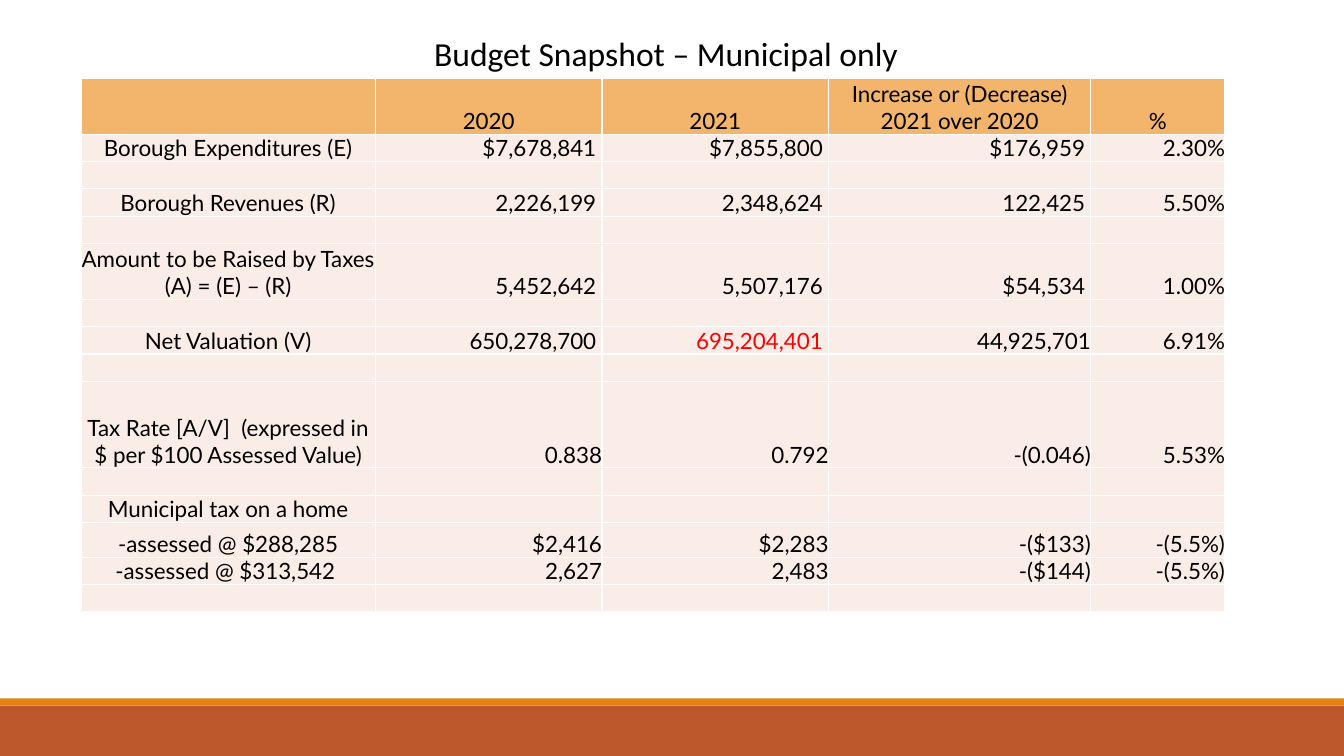
from lxml.etree import SubElement
from pptx import Presentation
from pptx.dml.color import RGBColor
from pptx.enum.shapes import MSO_SHAPE
from pptx.enum.text import MSO_ANCHOR, PP_ALIGN
from pptx.oxml.ns import qn
from pptx.util import Cm, Pt

# Content
TITLE = "Budget Snapshot – Municipal only"
BLANK = ("",) * 5
BUDGET = [
    ("", "2020", "2021", "Increase or (Decrease) 2021 over 2020", "%"),
    ("Borough Expenditures (E)", "$7,678,841 ", " $7,855,800 ", "$176,959 ", "2.30%"),
    BLANK,
    ("Borough Revenues (R)", "2,226,199 ", "2,348,624 ", "122,425 ", "5.50%"),
    BLANK,
    ("Amount to be Raised by Taxes (A) = (E) – (R)",
     "5,452,642 ", "5,507,176 ", "$54,534 ", "1.00%"),
    BLANK,
    ("Net Valuation (V)", "650,278,700 ", "695,204,401 ", "44,925,701", "6.91%"),
    BLANK,
    ("Tax Rate [A/V]  (expressed in $ per $100 Assessed Value)",
     "0.838", "0.792", "-(0.046)", "5.53%"),
    BLANK,
    ("Municipal tax on a home", "", "", "", ""),
    ("-assessed @ $288,285", "$2,416", "$2,283", "-($133)", "-(5.5%)"),
    ("-assessed @ $313,542 ", "2,627", "2,483", "-($144)", "-(5.5%)"),
    BLANK,
]
HIGHLIGHTED = "695,204,401 "

# Format
COLORS = {"header": "F3B56C", "body": "FAEDE7", "border": "FFFFFF", "text": "000000",
          "highlight": "FF0000", "band": "BD582C", "stripe": "E48312"}
COLUMN_WIDTHS = [7.42, 5.71, 5.71, 6.61, 3.38]
ROW_HEIGHT = 0.69
TALL_ROWS = {0: 1.4, 5: 1.4, 9: 2.18, 12: 0.87}
TEXT_SIZE = Pt(16)
CELL_FORMAT = {"margin_left": 0, "margin_right": 0, "margin_top": 0,
               "margin_bottom": 0, "vertical_anchor": MSO_ANCHOR.BOTTOM}
TITLE_PLACE = {"left": Cm(2.74), "top": Cm(0.69), "width": Cm(28.09), "height": Cm(1.27)}


def rgb(name):
    return RGBColor.from_string(COLORS[name])


def apply(target, values):
    for attribute, value in values.items():
        setattr(target, attribute, value)


def add_borders(cell):
    properties = cell._tc.get_or_add_tcPr()
    for side in ("lnL", "lnR", "lnT", "lnB"):
        line = SubElement(properties, qn(f"a:{side}"), w=str(Pt(1)))
        fill = SubElement(line, qn("a:solidFill"))
        SubElement(fill, qn("a:srgbClr"), val=COLORS["border"])


def fill_cell(cell, text, is_header, is_label):
    apply(cell, CELL_FORMAT)
    add_borders(cell)
    cell.fill.solid()
    cell.fill.fore_color.rgb = rgb("header" if is_header else "body")
    paragraph = cell.text_frame.paragraphs[0]
    paragraph.alignment = PP_ALIGN.CENTER if is_header or is_label else PP_ALIGN.RIGHT
    if text:
        run = paragraph.add_run()
        run.text = text
        apply(run.font, {"name": "Lato", "size": TEXT_SIZE, "bold": False})
        run.font.color.rgb = rgb("highlight" if text == HIGHLIGHTED else "text")
    else:
        # Keeps empty rows at the height of one text line
        SubElement(paragraph._p, qn("a:endParaRPr"), sz=str(int(TEXT_SIZE.pt * 100)))


def main():
    deck = Presentation()
    apply(deck, {"slide_width": Cm(33.87), "slide_height": Cm(19.05)})
    slide = deck.slides.add_slide(deck.slide_layouts[5])

    # Footer bands
    for color, top, height in (("band", 17.78, 1.27), ("stripe", 17.6, 0.18)):
        band = slide.shapes.add_shape(MSO_SHAPE.RECTANGLE, 0, Cm(top),
                                      deck.slide_width, Cm(height))
        band.shadow.inherit = False
        band.fill.solid()
        band.fill.fore_color.rgb = rgb(color)
        band.line.fill.background()

    # Budget table
    heights = [TALL_ROWS.get(index, ROW_HEIGHT) for index in range(len(BUDGET))]
    budget = slide.shapes.add_table(
        len(BUDGET), len(COLUMN_WIDTHS), Cm(2.04), Cm(1.98),
        Cm(sum(COLUMN_WIDTHS)), Cm(sum(heights))).table
    for column, width in zip(budget.columns, COLUMN_WIDTHS):
        column.width = Cm(width)
    for row_index, (entries, height) in enumerate(zip(BUDGET, heights)):
        budget.rows[row_index].height = Cm(height)
        for column_index, text in enumerate(entries):
            fill_cell(budget.cell(row_index, column_index), text,
                      row_index == 0, column_index == 0)

    # Title
    title = slide.shapes.title
    apply(title, TITLE_PLACE)
    title.text_frame.text = TITLE
    apply(title.text_frame, {"word_wrap": True, "vertical_anchor": MSO_ANCHOR.TOP})
    heading = title.text_frame.paragraphs[0]
    heading.alignment = PP_ALIGN.CENTER
    apply(heading.runs[0].font, {"name": "Calibri", "size": Pt(24), "bold": False})
    heading.runs[0].font.color.rgb = rgb("text")

    deck.save("out.pptx")


if __name__ == "__main__":
    main()
